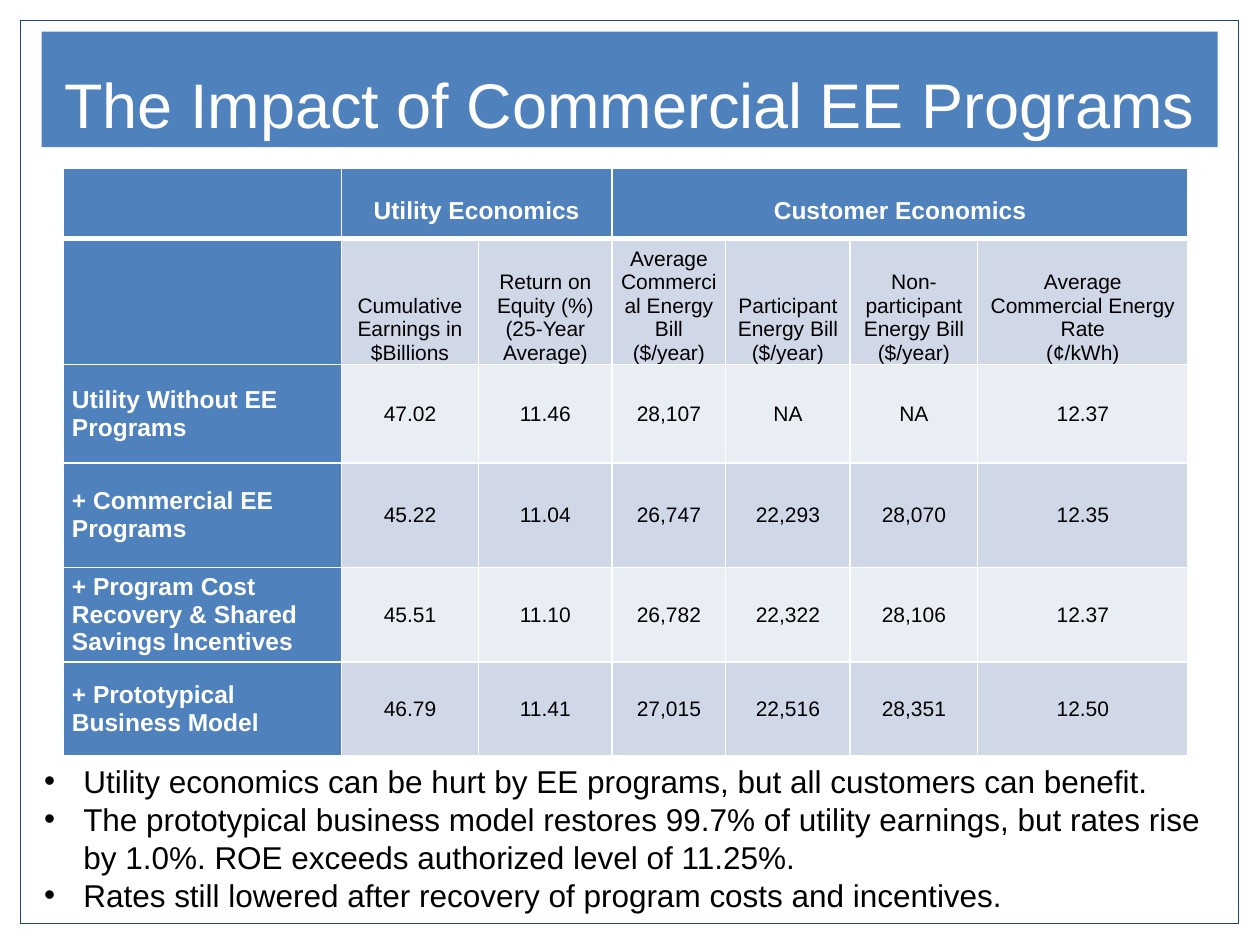
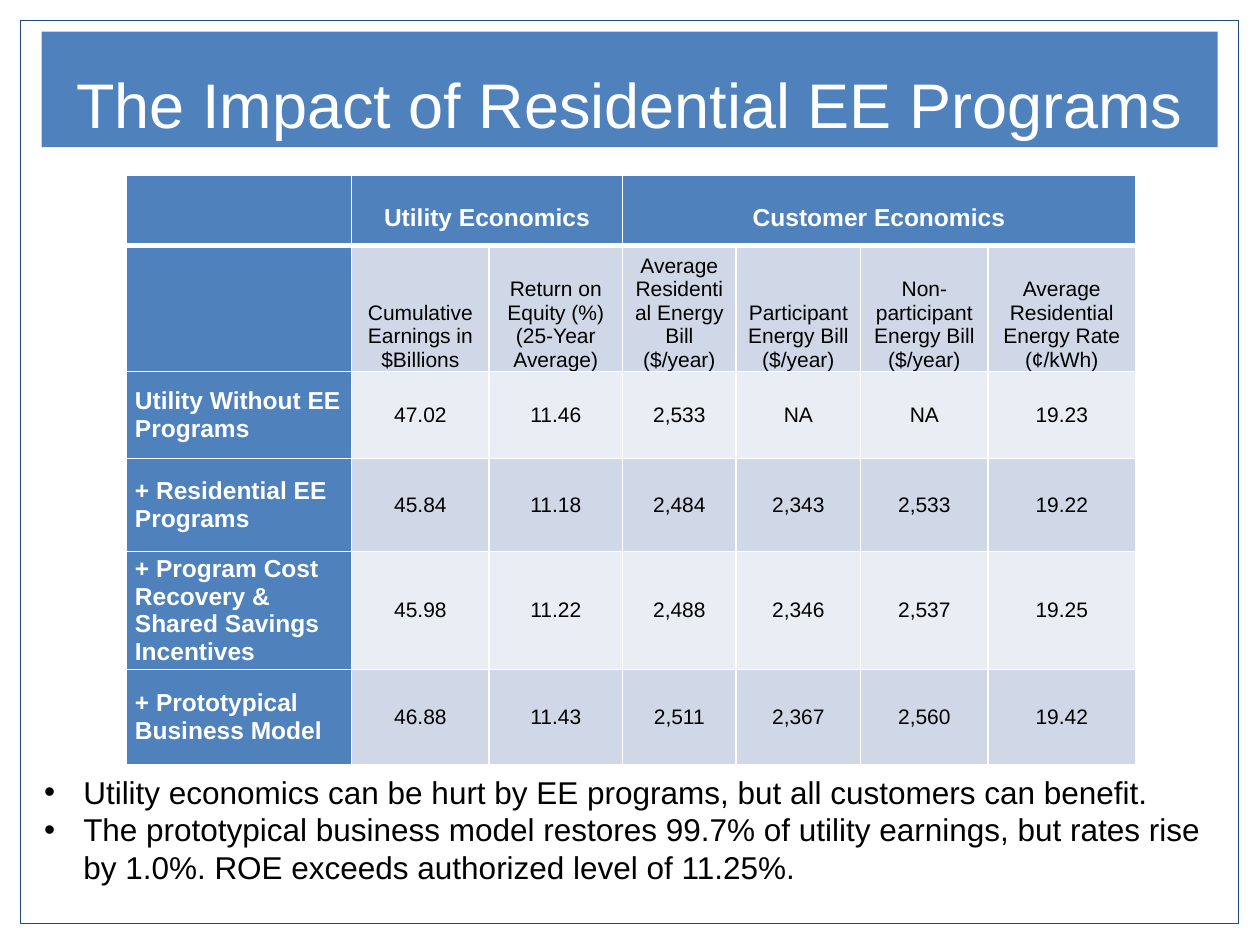
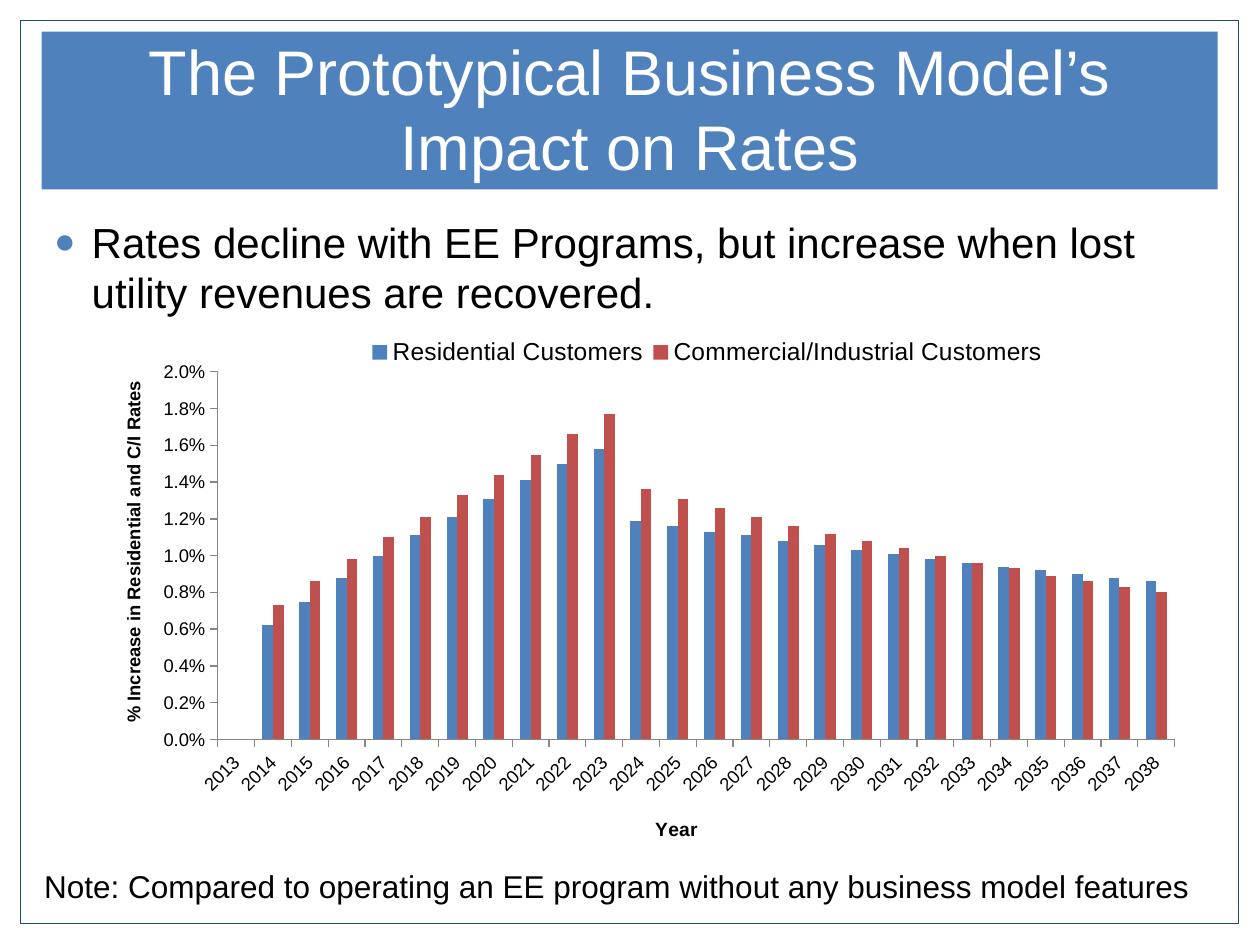
from dataclasses import dataclass

from lxml import etree
from pptx import Presentation
from pptx import util as u
from pptx.chart.data import CategoryChartData
from pptx.dml.color import RGBColor
from pptx.enum import chart as charts, shapes, text
from pptx.oxml import ns

ALIGN, ANCHOR = text.PP_ALIGN, text.MSO_ANCHOR


@dataclass(frozen=True)
class Theme:
    font: str = "Arial"
    blue: str = "4F81BD"
    red: str = "C0504D"
    navy: str = "1F497D"
    band_dark: str = "D0D8E8"
    band_light: str = "E9EDF4"
    axis: str = "868686"
    white: str = "FFFFFF"
    black: str = "000000"
    title: float = 36
    body: float = 24
    note: float = 18
    heading: float = 14
    cell: float = 12
    year_title: float = 11
    ticks: float = 10.5


THEME = Theme()

# Content
EARNINGS_BULLETS = [
    "Utility economics can be hurt by EE programs, but all customers can benefit.",
    "The prototypical business model restores 99.7% of utility earnings, but rates "
    "rise by 1.0%. ROE exceeds authorized level of 11.25%.",
]
COMMERCIAL = [
    ["47.02", "11.46", "28,107", "NA", "NA", "12.37"],
    ["45.22", "11.04", "26,747", "22,293", "28,070", "12.35"],
    ["45.51", "11.10", "26,782", "22,322", "28,106", "12.37"],
    ["46.79", "11.41", "27,015", "22,516", "28,351", "12.50"],
]
RESIDENTIAL = [
    ["47.02", "11.46", "2,533", "NA", "NA", "19.23"],
    ["45.84", "11.18", "2,484", "2,343", "2,533", "19.22"],
    ["45.98", "11.22", "2,488", "2,346", "2,537", "19.25"],
    ["46.88", "11.43", "2,511", "2,367", "2,560", "19.42"],
]
# Rate increases in hundredths of a percent, 2013 to 2038
YEARS = range(2013, 2039)
RATE_SERIES = {
    "Residential Customers": (THEME.blue, [
        0, 62, 75, 88, 100, 111, 121, 131, 141, 150, 158, 119, 116, 113, 111,
        108, 106, 103, 101, 98, 96, 94, 92, 90, 88, 86]),
    "Commercial/Industrial Customers": (THEME.red, [
        0, 73, 86, 98, 110, 121, 133, 144, 155, 166, 177, 136, 131, 126, 121,
        116, 112, 108, 104, 100, 96, 93, 89, 86, 83, 80]),
}


# Formatting helpers
def rgb(colour):
    return RGBColor.from_string(colour)


def apply(target, formats):
    for name, value in formats.items():
        setattr(target, name, value)


def style_font(font, size, colour=THEME.black, bold=False):
    apply(font, {"name": THEME.font, "size": u.Pt(size), "bold": bold})
    font.color.rgb = rgb(colour)


def add_bullet(paragraph, char, indent, colour, percent):
    properties = paragraph._p.get_or_add_pPr()
    properties.set("marL", str(indent))
    properties.set("indent", str(-indent))
    hue = etree.SubElement(properties, ns.qn("a:buClr"))
    etree.SubElement(hue, ns.qn("a:srgbClr"), val=colour)
    etree.SubElement(properties, ns.qn("a:buSzPct"), val=str(percent * 1000))
    etree.SubElement(properties, ns.qn("a:buFont"), typeface=THEME.font)
    etree.SubElement(properties, ns.qn("a:buChar"), char=char)


def write(frame, lines, size, colour=THEME.black, bold=False,
          align=ALIGN.LEFT, bullet=None):
    for index, line in enumerate(lines):
        paragraph = frame.add_paragraph() if index else frame.paragraphs[0]
        paragraph.alignment = align
        if bullet:
            add_bullet(paragraph, **bullet)
        run = paragraph.add_run()
        run.text = line
        style_font(run.font, size, colour, bold)


# Slide elements
def add_rectangle(slide, left, top, width, height, fill=None, line=None):
    rectangle = slide.shapes.add_shape(
        shapes.MSO_SHAPE.RECTANGLE, *map(u.Cm, (left, top, width, height)))
    rectangle.shadow.inherit = False
    if fill:
        rectangle.fill.solid()
        rectangle.fill.fore_color.rgb = rgb(fill)
    else:
        rectangle.fill.background()
    if line:
        rectangle.line.color.rgb = rgb(line)
        rectangle.line.width = u.Pt(0.75)
    else:
        rectangle.line.fill.background()
    return rectangle


def add_titled_slide(prs, title, band_height=2.33):
    slide = prs.slides.add_slide(prs.slide_layouts[6])
    add_rectangle(slide, 0.42, 0.42, 24.55, 18.2, line=THEME.navy)
    band = add_rectangle(slide, 0.84, 0.64, 23.71, band_height, fill=THEME.blue)
    apply(band.text_frame, {"word_wrap": True, "vertical_anchor": ANCHOR.BOTTOM})
    write(band.text_frame, [title], THEME.title, THEME.white, align=ALIGN.CENTER)
    return slide


def add_text(slide, left, top, width, height, lines, size, bullet=None):
    box = slide.shapes.add_textbox(*map(u.Cm, (left, top, width, height)))
    box.text_frame.word_wrap = True
    write(box.text_frame, lines, size, bullet=bullet)


def add_takeaways(slide, top, height, lines):
    dot = {"char": "•", "indent": u.Cm(0.79), "colour": THEME.black, "percent": 100}
    add_text(slide, 0.64, top, 24.13, height, lines, THEME.note, dot)


# Table
def set_borders(cell, top=1, bottom=1):
    properties = cell._tc.get_or_add_tcPr()
    widths = {"a:lnL": 1, "a:lnR": 1, "a:lnT": top, "a:lnB": bottom}
    for index, (tag, points) in enumerate(widths.items()):
        edge = etree.Element(ns.qn(tag), w=str(u.Pt(points)))
        fill = etree.SubElement(edge, ns.qn("a:solidFill"))
        etree.SubElement(fill, ns.qn("a:srgbClr"), val=THEME.white)
        properties.insert(index, edge)


def format_cell(cell, row, column):
    banded = THEME.band_dark if row % 2 else THEME.band_light
    cell.fill.solid()
    cell.fill.fore_color.rgb = rgb(THEME.blue if row == 0 or column == 0 else banded)
    set_borders(cell, top=3 if row == 1 else 1, bottom=3 if row == 0 else 1)
    apply(cell, {
        "margin_left": u.Cm(0.18), "margin_right": u.Cm(0.18), "margin_top": 0,
        "margin_bottom": u.Cm(0.28) if row == 0 else 0,
        "vertical_anchor": ANCHOR.BOTTOM if row < 2 else ANCHOR.MIDDLE})


def add_impact_table(slide, sector, left, top, height, columns, rows, values):
    grid = [
        ["", "Utility Economics", "", "Customer Economics", "", "", ""],
        ["", "Cumulative Earnings in $Billions",
         "Return on Equity (%) (25-Year Average)",
         f"Average {sector} Energy Bill ($/year)",
         "Participant Energy Bill ($/year)",
         "Non-participant Energy Bill\n($/year)",
         f"Average {sector} Energy Rate\n(¢/kWh)"],
    ]
    scenarios = ["Utility Without EE Programs", f"+ {sector} EE Programs",
                 "+ Program Cost Recovery & Shared Savings Incentives",
                 "+ Prototypical Business Model"]
    grid += [[name, *results] for name, results in zip(scenarios, values)]

    table = slide.shapes.add_table(
        len(rows), len(columns),
        *map(u.Cm, (left, top, sum(columns), height))).table
    for column, width in zip(table.columns, columns):
        column.width = u.Cm(width)
    for row, row_height in zip(table.rows, rows):
        row.height = u.Cm(row_height)

    for r, entries in enumerate(grid):
        for c, entry in enumerate(entries):
            cell = table.cell(r, c)
            format_cell(cell, r, c)
            if not entry:
                continue
            heading = r == 0 or c == 0
            write(cell.text_frame, entry.split("\n"),
                  THEME.heading if heading else THEME.cell,
                  THEME.white if heading else THEME.black, heading,
                  ALIGN.LEFT if c == 0 else ALIGN.CENTER)
    table.cell(0, 1).merge(table.cell(0, 2))
    table.cell(0, 3).merge(table.cell(0, 6))


# Chart
def place(element, **fractions):
    """Give a chart part a fixed place, in fractions of the chart."""
    for old in element.findall(ns.qn("c:layout")):
        element.remove(old)
    layout = etree.Element(ns.qn("c:layout"))
    manual = etree.SubElement(layout, ns.qn("c:manualLayout"))
    if element.tag == ns.qn("c:plotArea"):
        etree.SubElement(manual, ns.qn("c:layoutTarget"), val="inner")
    for mode in ("xMode", "yMode"):
        etree.SubElement(manual, ns.qn(f"c:{mode}"), val="edge")
    for name, value in fractions.items():
        etree.SubElement(manual, ns.qn(f"c:{name}"), val=str(value))
    overlay = element.find(ns.qn("c:overlay"))
    if overlay is None:
        element.insert(0, layout)
    else:
        overlay.addprevious(layout)


def format_axis(axis, title, title_size, x, y):
    apply(axis, {"has_major_gridlines": False,
                 "major_tick_mark": charts.XL_TICK_MARK.OUTSIDE,
                 "minor_tick_mark": charts.XL_TICK_MARK.NONE})
    axis.format.line.color.rgb = rgb(THEME.axis)
    style_font(axis.tick_labels.font, THEME.ticks)
    write(axis.axis_title.text_frame, [title], title_size, bold=True,
          align=ALIGN.CENTER)
    place(axis.axis_title._element, x=x, y=y)


def add_rate_chart(slide, left, top, width, height):
    rates = CategoryChartData(number_format="0.0%")
    rates.categories = [str(year) for year in YEARS]
    for name, (_, points) in RATE_SERIES.items():
        rates.add_series(name, [point / 10000 for point in points])
    chart = slide.shapes.add_chart(
        charts.XL_CHART_TYPE.COLUMN_CLUSTERED,
        *map(u.Cm, (left, top, width, height)), rates).chart
    style_font(chart.font, 10)
    apply(chart, {"has_title": False, "has_legend": True})
    apply(chart.legend, {"position": charts.XL_LEGEND_POSITION.TOP,
                         "include_in_layout": False})
    style_font(chart.legend.font, THEME.heading)
    place(chart.legend._element, x=0.25, y=0.06, w=0.62, h=0.05)

    columns = chart.plots[0]
    apply(columns, {"gap_width": 150, "overlap": 0, "vary_by_categories": False})
    for series, (colour, _) in zip(columns.series, RATE_SERIES.values()):
        series.format.fill.solid()
        series.format.fill.fore_color.rgb = rgb(colour)
    place(chart._chartSpace.chart.plotArea, x=0.12, y=0.12, w=0.86, h=0.66)

    format_axis(chart.category_axis, "Year", THEME.year_title, 0.51, 0.91)
    chart.category_axis._element.txPr.bodyPr.set("rot", "-2700000")
    format_axis(chart.value_axis, "% Increase in Residential and C/I Rates",
                THEME.ticks, 0.03, 0.13)
    apply(chart.value_axis, {"minimum_scale": 0, "maximum_scale": 0.02,
                             "major_unit": 0.002})
    apply(chart.value_axis.tick_labels, {"number_format": "0.0%",
                                         "number_format_is_linked": False})


# Slides
def build_commercial(prs):
    slide = add_titled_slide(prs, "The Impact of Commercial EE Programs")
    add_takeaways(slide, 15.24, 3.33, EARNINGS_BULLETS + [
        "Rates still lowered after recovery of program costs and incentives."])
    add_impact_table(slide, "Commercial", 1.27, 3.39, 11.86,
                     [5.61, 2.77, 2.69, 2.29, 2.51, 2.57, 4.24],
                     [1.42, 2.44, 1.98, 2.11, 1.9, 1.9], COMMERCIAL)


def build_residential(prs):
    slide = add_titled_slide(prs, "The Impact of Residential EE Programs")
    add_takeaways(slide, 15.45, 2.57, EARNINGS_BULLETS)
    add_impact_table(slide, "Residential", 2.54, 3.53, 11.89,
                     [4.55, 2.77, 2.69, 2.29, 2.51, 2.57, 2.97],
                     [1.42, 2.44, 1.75, 1.88, 1.93, 1.93], RESIDENTIAL)


def build_rates(prs):
    slide = add_titled_slide(
        prs, "The Prototypical Business Model’s Impact on Rates", 3.18)
    disc = {"char": "●", "indent": u.Cm(0.76), "colour": THEME.blue, "percent": 85}
    add_text(slide, 0.84, 4.24, 23.62, 2.74, [
        "Rates decline with EE Programs, but increase when lost utility revenues "
        "are recovered."], THEME.body, disc)
    add_text(slide, 0.64, 17.35, 23.93, 1.02, [
        "Note: Compared to operating an EE program without any business model "
        "features"], THEME.note)
    add_rate_chart(slide, 1.7, 6.15, 22.43, 11.23)


def main():
    prs = Presentation()
    apply(prs, {"slide_width": u.Cm(25.4), "slide_height": u.Cm(19.05)})
    build_commercial(prs)
    build_residential(prs)
    build_rates(prs)
    prs.save("out.pptx")


if __name__ == "__main__":
    main()
